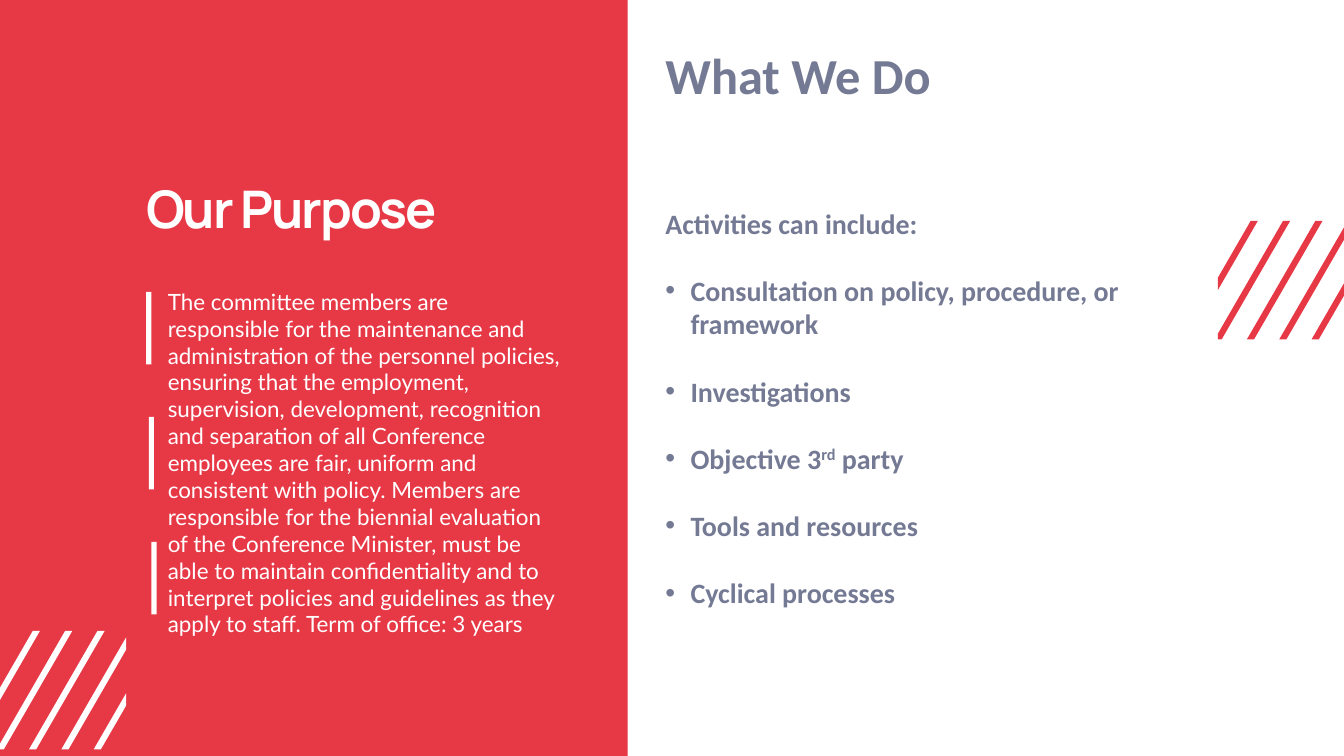
from lxml.etree import SubElement
from pptx import Presentation
from pptx.dml.color import RGBColor
from pptx.enum.shapes import MSO_SHAPE
from pptx.enum.text import MSO_ANCHOR, MSO_AUTO_SIZE, PP_ALIGN
from pptx.oxml.ns import qn
from pptx.util import Cm, Pt

RED, WHITE, GREY = "E73846", "FFFFFF", "747A94"
WIDTH, HEIGHT = 67.72, 38.1
PANEL = (0, 0, 31.62, HEIGHT)
BARS = [(7.37 + 0.13 * i, 14.71 + 6.3 * i, 0.26, 3.66) for i in range(3)]
TILE_W, TILE_H = 6.35, 5.97
STRIPE = {"count": 5, "first": 1.65, "pitch": 1.63, "width": 0.36, "run": 3.45}
STRIPE_TILES = [(0, 31.8, WHITE), (WIDTH - TILE_W, 11.13, RED)]

PURPOSE = (
    "The committee members are responsible for the maintenance and administration of the "
    "personnel policies, ensuring that the employment, supervision, development, recognition "
    "and separation of all Conference employees are fair, uniform and consistent with policy. "
    "Members are responsible for the biennial evaluation of the Conference Minister, must be "
    "able to maintain confidentiality and to interpret policies and guidelines as they apply "
    "to staff. Term of office: 3 years"
)
ACTIVITIES = [
    ["Activities can include:"],
    ["Consultation on policy, procedure, or framework"],
    ["Investigations"],
    ["Objective 3", "rd", " party"],
    ["Tools and resources"],
    ["Cyclical processes"],
]
SUPERSCRIPT = "rd"

TEXTS = [
    {"idx": 0, "box": (7.11, 9.09, 21.44, 3.07), "paragraphs": [["Our Purpose"]],
     "font": {"name": "Manrope", "size": Pt(74), "bold": True}, "color": WHITE,
     "frame": {"vertical_anchor": MSO_ANCHOR.BOTTOM},
     "line": Pt(76), "tracking": -290},
    {"idx": 1, "box": (8.2, 14.38, 20.32, 16.66), "paragraphs": [[PURPOSE]],
     "font": {"name": "Lato", "size": Pt(32), "bold": False}, "color": WHITE},
    {"idx": 3, "box": (33.27, 2.11, 28.91, 3.33), "paragraphs": [["What We Do"]],
     "font": {"name": "Calibri", "size": Pt(72), "bold": True}, "color": GREY},
    {"idx": 4, "box": (33.27, 6.88, 28.91, 27.61), "paragraphs": ACTIVITIES,
     "font": {"name": "Calibri", "size": Pt(40), "bold": True}, "color": GREY,
     "frame": {"margin_top": Cm(3.51)}, "gap": Pt(48)},
]


def rgb(value):
    """Turn a hex string into a colour."""
    return RGBColor.from_string(value)


def set_all(target, values):
    """Set each named attribute on the target."""
    for name, value in values.items():
        setattr(target, name, value)


def paint(sp, color):
    """Give a shape a plain fill without line or shadow."""
    sp.fill.solid()
    sp.fill.fore_color.rgb = rgb(color)
    sp.line.fill.background()
    sp.shadow.inherit = False


def add_bar(s, box, color):
    """Add a plain rectangle."""
    paint(s.shapes.add_shape(MSO_SHAPE.RECTANGLE, *map(Cm, box)), color)


def clip(points, limit, sign):
    """Keep the part of a polygon on one side of a vertical limit."""
    kept = []
    for (x0, y0), (x1, y1) in zip(points[-1:] + points[:-1], points):
        inside0, inside1 = sign * (x0 - limit) >= 0, sign * (x1 - limit) >= 0
        if inside0 != inside1:
            kept.append((limit, y0 + (y1 - y0) * (limit - x0) / (x1 - x0)))
        if inside1:
            kept.append((x1, y1))
    return kept


def stripe_outlines():
    """Return the slanted stripes, cut at the tile's sides, in 0.01 cm."""
    outlines = []
    for i in range(STRIPE["count"]):
        left = STRIPE["first"] + i * STRIPE["pitch"]
        right, run = left + STRIPE["width"], STRIPE["run"]
        points = [(left, 0), (right, 0), (right - run, TILE_H), (left - run, TILE_H)]
        points = clip(clip(points, 0, 1), TILE_W, -1)
        outlines.append([(round(x * 100), round(y * 100)) for x, y in points])
    return outlines


def add_stripes(s, left, top, color):
    """Add one tile of stripes as a single freeform."""
    outlines = stripe_outlines()
    builder = s.shapes.build_freeform(*outlines[0][0], scale=Cm(0.01))
    for i, points in enumerate(outlines):
        if i:
            builder.move_to(*points[0])
        builder.add_line_segments(points[1:], close=True)
    paint(builder.convert_to_shape(Cm(left), Cm(top)), color)


def set_bullet(p, bulleted):
    """Set the bullet and hanging indent of a paragraph."""
    pPr = p._p.get_or_add_pPr()
    indent = Cm(1.27) if bulleted else 0
    pPr.set("marL", str(indent))
    pPr.set("indent", str(-indent))
    if bulleted:
        SubElement(pPr, qn("a:buFont")).set("typeface", "Arial")
        SubElement(pPr, qn("a:buChar")).set("char", "•")
    else:
        SubElement(pPr, qn("a:buNone"))


def fill_text(s, item):
    """Place, fill and format one placeholder in front of the shapes."""
    sp = next(h for h in s.placeholders if h.placeholder_format.idx == item["idx"])
    s.shapes._spTree.append(sp._element)
    set_all(sp, dict(zip(("left", "top", "width", "height"), map(Cm, item["box"]))))
    tf = sp.text_frame
    set_all(tf, {"word_wrap": True, "auto_size": MSO_AUTO_SIZE.NONE,
                 "vertical_anchor": MSO_ANCHOR.TOP, **item.get("frame", {})})
    for i, texts in enumerate(item["paragraphs"]):
        p = tf.add_paragraph() if i else tf.paragraphs[0]
        set_bullet(p, i > 0)
        set_all(p, {"alignment": PP_ALIGN.LEFT, "line_spacing": item.get("line", 1.0),
                    "space_before": item["gap"] if i else Pt(0), "space_after": Pt(0)})
        for text in texts:
            r = p.add_run()
            r.text = text
            set_all(r.font, item["font"])
            r.font.color.rgb = rgb(item["color"])
            if "tracking" in item:
                r.font._element.set("spc", str(item["tracking"]))
            if text == SUPERSCRIPT:
                r.font._element.set("baseline", "30000")


def main():
    """Build the slide and save it."""
    prs = Presentation()
    prs.slide_width, prs.slide_height = Cm(WIDTH), Cm(HEIGHT)
    s = prs.slides.add_slide(prs.slide_layouts[4])
    add_bar(s, PANEL, RED)
    for box in BARS:
        add_bar(s, box, WHITE)
    for tile in STRIPE_TILES:
        add_stripes(s, *tile)
    for item in TEXTS:
        fill_text(s, item)
    for sp in list(s.placeholders):
        if not sp.text_frame.text:
            sp._element.getparent().remove(sp._element)
    prs.save("out.pptx")


if __name__ == "__main__":
    main()
